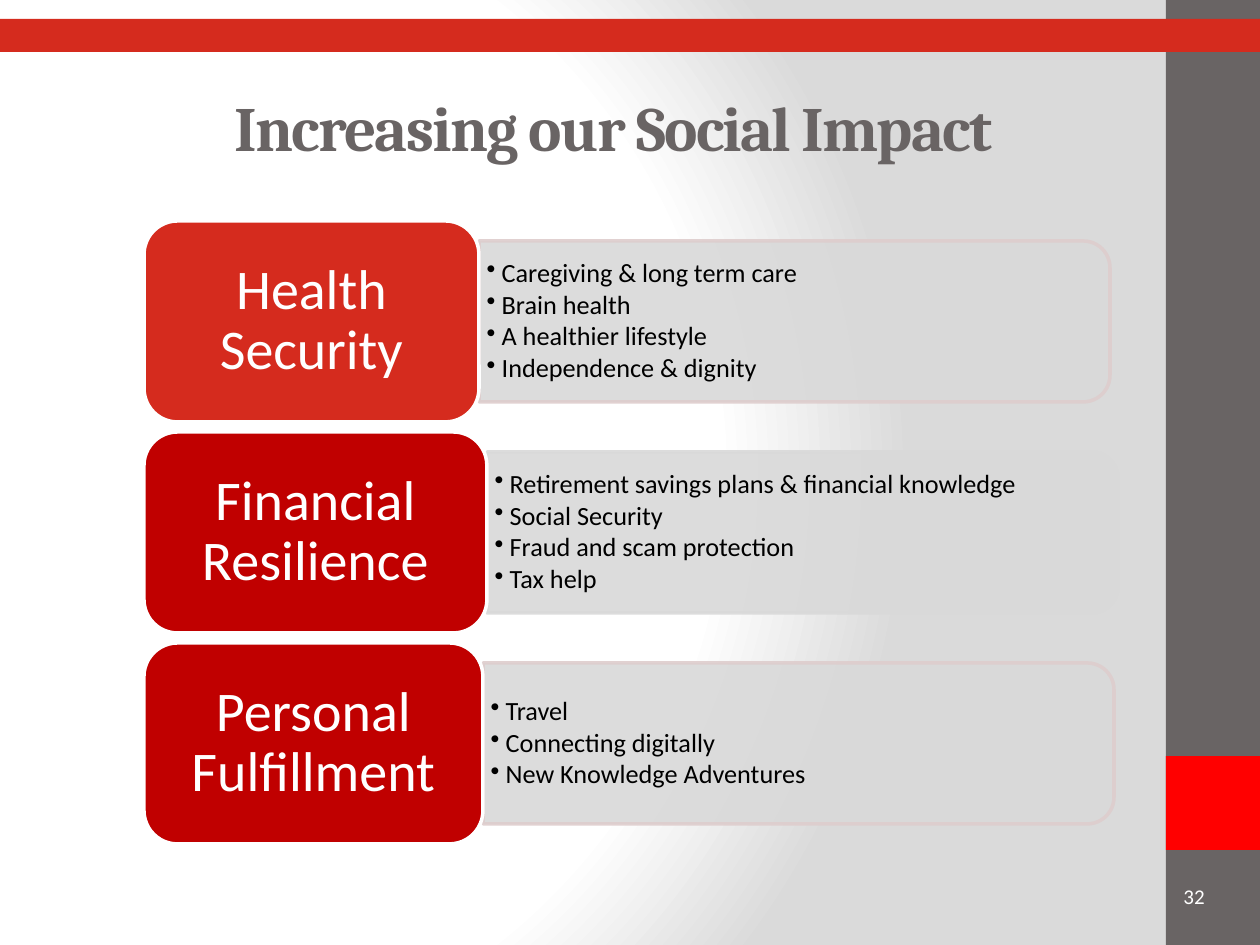
from lxml.etree import SubElement
from pptx import Presentation
from pptx.dml.color import RGBColor
from pptx.enum.shapes import MSO_SHAPE
from pptx.enum.text import MSO_ANCHOR, PP_ALIGN
from pptx.oxml import parse_xml
from pptx.oxml.ns import nsdecls, qn
from pptx.util import Inches, Pt

PX = Inches(1) / 126
WHITE = RGBColor(0xFF, 0xFF, 0xFF)
BLACK = RGBColor(0, 0, 0)
GRAY = RGBColor(0x69, 0x64, 0x64)
PANEL = RGBColor(0xD9, 0xD9, 0xD9)
PINK = RGBColor(0xDE, 0xCD, 0xCD)
BRIGHT_RED = RGBColor(0xFF, 0, 0)
RED = RGBColor(0xD5, 0x2B, 0x1E)
DARK_RED = RGBColor(0xC0, 0, 0)


def add_shape(kind, x, y, w, h, fill, line=None):
    sp = s.shapes.add_shape(kind, *(round(v * PX) for v in (x, y, w, h)))
    sp.shadow.inherit = False
    sp.fill.solid()
    sp.fill.fore_color.rgb = fill
    if line is None:
        sp.line.fill.background()
    else:
        sp.line.color.rgb = line
        sp.line.width = Pt(2)
    return sp


def add_text(x, y, w, h, lines, size, color, font="Calibri", align=PP_ALIGN.LEFT):
    """Add a wrapped, vertically centred text box with one paragraph per line."""
    tf = s.shapes.add_textbox(*(round(v * PX) for v in (x, y, w, h))).text_frame
    tf.word_wrap = True
    tf.vertical_anchor = MSO_ANCHOR.MIDDLE
    tf.text = "\n".join(lines)
    for p in tf.paragraphs:
        p.alignment = align
        p.font.size, p.font.name, p.font.color.rgb = Pt(size), font, color
    return tf


prs = Presentation()
prs.slide_width, prs.slide_height = Inches(10), Inches(7.5)
s = prs.slides.add_slide(prs.slide_layouts[6])

# Background: radial gradient
s.background.fill.solid()
solid = s._element.find(".//" + qn("p:bgPr")).find(qn("a:solidFill"))
stops = "".join(
    f'<a:gs pos="{pos * 1000}"><a:srgbClr val="{color}"/></a:gs>'
    for pos, color in ((0, "FFFFFF"), (75, "FFFFFF"), (100, "DADADA"))
)
solid.getparent().replace(solid, parse_xml(
    f'<a:gradFill {nsdecls("a")} rotWithShape="1"><a:gsLst>{stops}</a:gsLst>'
    '<a:path path="circle"><a:fillToRect l="20000" t="50000" r="100000" b="50000"/>'
    '</a:path></a:gradFill>'
))

# Frame
add_shape(MSO_SHAPE.RECTANGLE, 1166, 0, 94, 945, GRAY)
add_shape(MSO_SHAPE.RECTANGLE, 1166, 756, 94, 94, BRIGHT_RED)
add_shape(MSO_SHAPE.RECTANGLE, 0, 19, 1260, 33, RED)
add_text(924, 871, 293, 50, ["32"], 12, WHITE, align=PP_ALIGN.RIGHT)

title = add_text(78, 68, 1071, 116, ["Increasing our Social Impact"], 36, GRAY,
                 "Cambria", PP_ALIGN.CENTER).paragraphs[0]
title.font.bold = True
title.runs[0].font._element.set("spc", "-100")

# Rows: label on the left, bulleted panel on the right
LEFT, TOP, PITCH, LABEL_H = 144, 221, 211, 201
PANEL_W, PANEL_H, LIST_W, LIST_H = 631, 161, 622, 145
rows = [
    ("Health Security", 335, RED, PINK,
     ["Caregiving & long term care", "Brain health", "A healthier lifestyle",
      "Independence & dignity"]),
    ("Financial Resilience", 343, DARK_RED, PANEL,
     ["Retirement savings plans & financial knowledge", "Social Security",
      "Fraud and scam protection", "Tax help"]),
    ("Personal Fulfillment", 339, DARK_RED, PINK,
     ["Travel", "Connecting digitally", "New Knowledge Adventures"]),
]
for i, (label, label_w, fill, outline, items) in enumerate(rows):
    top = TOP + i * PITCH
    mid = top + LABEL_H / 2
    x = LEFT + label_w

    # Turned a quarter, so width and height swap around the centre
    panel = add_shape(MSO_SHAPE.ROUND_2_SAME_RECTANGLE, x + (PANEL_W - PANEL_H) / 2,
                      mid - PANEL_W / 2, PANEL_H, PANEL_W, PANEL, outline)
    panel.rotation = 90
    for color in panel._element.spPr.iter(qn("a:srgbClr")):
        SubElement(color, qn("a:alpha")).set("val", "90000")

    tf = add_text(x, mid - LIST_H / 2, LIST_W, LIST_H, items, 15, BLACK)
    tf.margin_left = tf.margin_right = Inches(0.06)
    tf.margin_top = tf.margin_bottom = Inches(0.03)
    for p in tf.paragraphs:
        p.line_spacing = 0.9
        p.space_after = Pt(2)
        pPr = p._p.get_or_add_pPr()
        pPr.set("marL", str(Inches(0.12)))
        pPr.set("indent", str(-Inches(0.12)))
        bullet = parse_xml(f'<a:buChar {nsdecls("a")} char="•"/>')
        pPr.find(qn("a:defRPr")).addprevious(bullet)

    sp = add_shape(MSO_SHAPE.ROUNDED_RECTANGLE, LEFT, top, label_w, LABEL_H, fill, WHITE)
    tf = sp.text_frame
    tf.word_wrap = True
    tf.vertical_anchor = MSO_ANCHOR.MIDDLE
    tf.margin_left = tf.margin_right = Inches(0.13)
    tf.text = label
    p = tf.paragraphs[0]
    p.alignment = PP_ALIGN.CENTER
    p.line_spacing = 0.9
    p.font.size, p.font.name, p.font.color.rgb = Pt(32), "Calibri", WHITE

prs.save("out.pptx")
